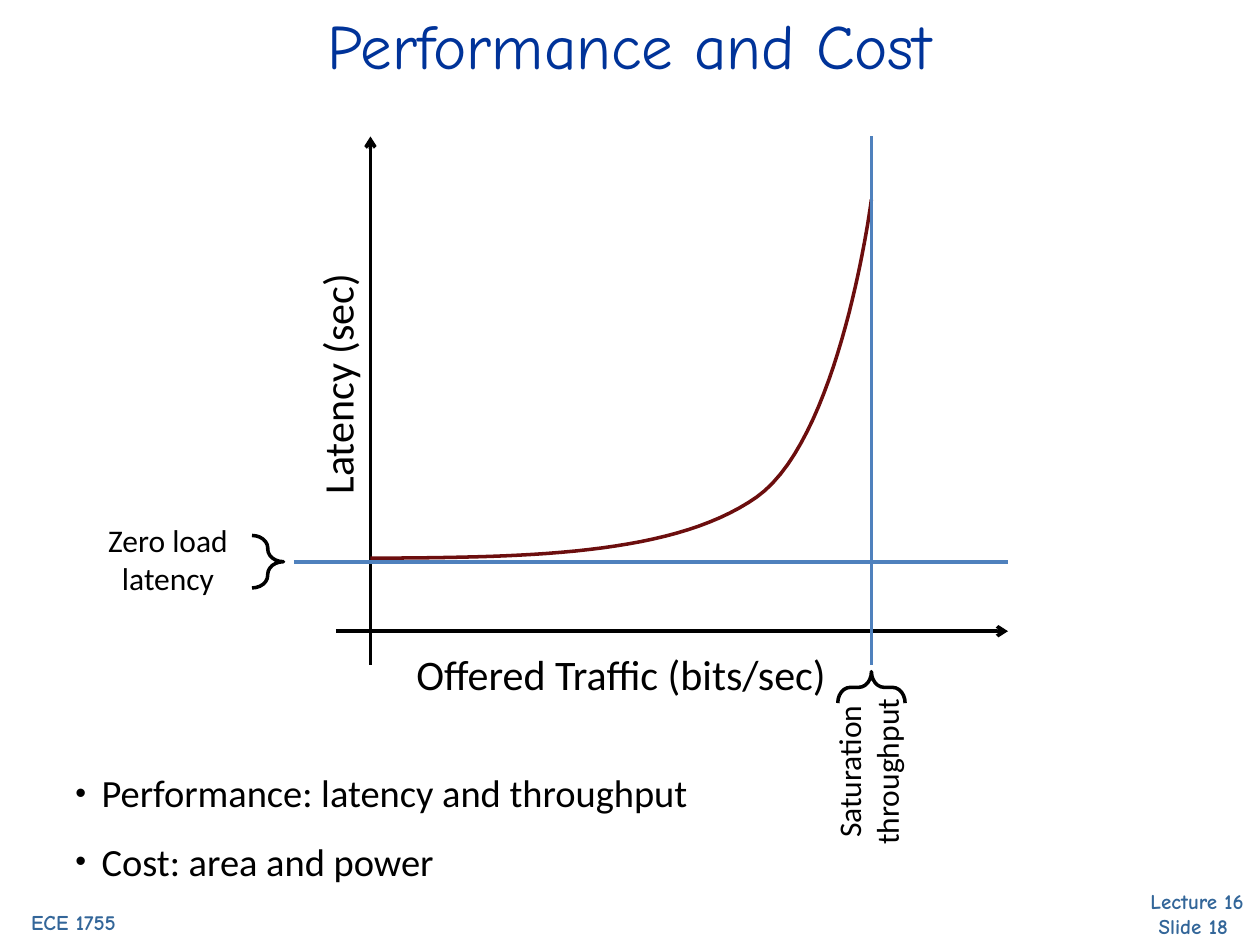
from dataclasses import dataclass

from lxml import etree
from pptx import Presentation
from pptx import util as u
from pptx.dml.color import RGBColor
from pptx.enum import shapes, text
from pptx.oxml.ns import qn

BLACK, BLUE, DARK_RED = "000000", "4F81BD", "6C0E0E"
TITLE_BLUE, FOOTER_BLUE = "003399", "336699"
BODY_FONT, TITLE_FONT = "Calibri", "Comic Neue"
LINE_WIDTH = 2

# Graph geometry in points
AXIS_X, AXIS_Y = 211.7, 360.7
TOP, BOTTOM, RIGHT = 78, 380, 576
SATURATION_X, ZERO_LOAD_Y = 498, 321


@dataclass
class Line:
    start: tuple[float, float]
    end: tuple[float, float]
    color: str
    arrow: bool = False


@dataclass
class Label:
    words: str
    box: tuple[float, float, float, float]
    size: float
    rotation: float = 0
    font: str = BODY_FONT
    color: str = BLACK
    bold: bool = False


@dataclass
class Brace:
    box: tuple[float, float, float, float]
    rotation: float = 0


LINES_BEHIND = [
    Line((AXIS_X, BOTTOM), (AXIS_X, TOP), BLACK, arrow=True),
    Line((192, AXIS_Y), (RIGHT, AXIS_Y), BLACK, arrow=True),
]
LINES_IN_FRONT = [
    Line((168, ZERO_LOAD_Y), (RIGHT, ZERO_LOAD_Y), BLUE),
    Line((SATURATION_X, BOTTOM), (SATURATION_X, TOP), BLUE),
]
CURVE = [
    [(211.7, 319), (298, 318.5), (384.5, 318), (432.5, 284)],
    [(432.5, 284), (480.5, 250), (498, 114), (498, 114)],
]
BRACES = [Brace((144, 306, 18, 30)), Brace((489, 373.5, 18, 38.5), 270)]
LABELS = [
    Label("Latency (sec)", (51, 201.5, 283, 36), 24, 270),
    Label("Offered Traffic (bits/sec)", (212, 367, 286, 36), 24),
    Label("Zero load latency", (48, 294, 96, 51), 18),
    Label("Saturation throughput", (439, 415.5, 114, 51), 18, 270),
    Label("Lecture 16\vSlide 18 ", (636, 504, 96, 36), 12,
          font=TITLE_FONT, color=FOOTER_BLUE, bold=True),
    Label("ECE 1755", (-6, 516, 96, 22), 12,
          font=TITLE_FONT, color=FOOTER_BLUE, bold=True),
]
BULLETS = ["Performance: latency and throughput", "Cost: area and power"]


def rgb(color: str) -> RGBColor:
    return RGBColor.from_string(color)


def points(values) -> list[u.Pt]:
    return [u.Pt(value) for value in values]


def format_runs(paragraph, size: float, font: str, color: str, bold: bool = False) -> None:
    for run in paragraph.runs:
        run.font.size = u.Pt(size)
        run.font.name = font
        run.font.bold = bold
        run.font.color.rgb = rgb(color)


def format_outline(shape, color: str) -> None:
    shape.line.color.rgb = rgb(color)
    shape.line.width = u.Pt(LINE_WIDTH)


def add_title(slide, words: str) -> None:
    title = slide.shapes.title
    title.left, title.top, title.width, title.height = points((36, 0, 648, 72))
    title.text_frame.text = words
    title.text_frame.vertical_anchor = text.MSO_ANCHOR.TOP
    paragraph = title.text_frame.paragraphs[0]
    paragraph.alignment = text.PP_ALIGN.CENTER
    format_runs(paragraph, 36, TITLE_FONT, TITLE_BLUE)


def add_line(slide, line: Line) -> None:
    connector = slide.shapes.add_connector(
        shapes.MSO_CONNECTOR.STRAIGHT, *points(line.start + line.end))
    format_outline(connector, line.color)
    if line.arrow:
        etree.SubElement(connector.line._get_or_add_ln(), qn("a:tailEnd"), type="arrow")
    etree.SubElement(connector._element.spPr, qn("a:effectLst"))


def bezier_points(controls, steps: int = 30) -> list[tuple[float, float]]:
    weights = (1, 3, 3, 1)
    curve = []
    for step in range(steps + 1):
        t = step / steps
        factors = [w * (1 - t) ** (3 - i) * t ** i for i, w in enumerate(weights)]
        curve.append(tuple(sum(f * c[axis] for f, c in zip(factors, controls))
                           for axis in (0, 1)))
    return curve


def add_curve(slide) -> None:
    first, *rest = [point for part in CURVE for point in bezier_points(part)]
    builder = slide.shapes.build_freeform(*points(first))
    builder.add_line_segments([points(point) for point in rest], close=False)
    curve = builder.convert_to_shape()
    curve.shadow.inherit = False
    curve.fill.background()
    format_outline(curve, DARK_RED)


def add_brace(slide, brace: Brace) -> None:
    shape = slide.shapes.add_shape(shapes.MSO_SHAPE.RIGHT_BRACE, *points(brace.box))
    shape.adjustments[0] = 0.4
    shape.rotation = brace.rotation
    shape.shadow.inherit = False
    shape.fill.background()
    format_outline(shape, BLACK)


def add_label(slide, label: Label) -> None:
    shape = slide.shapes.add_textbox(*points(label.box))
    shape.rotation = label.rotation
    shape.text_frame.word_wrap = True
    shape.text_frame.text = label.words
    paragraph = shape.text_frame.paragraphs[0]
    paragraph.alignment = text.PP_ALIGN.CENTER
    format_runs(paragraph, label.size, label.font, label.color, label.bold)


def add_bullets(slide) -> None:
    frame = slide.shapes.add_textbox(*points((36, 438.5, 648, 67))).text_frame
    frame.word_wrap = True
    frame.text = "\n".join(BULLETS)
    for paragraph in frame.paragraphs:
        paragraph.line_spacing = u.Pt(24)
        paragraph.space_before = u.Pt(15)
        format_runs(paragraph, 22, BODY_FONT, BLACK)
        properties = paragraph._p.get_or_add_pPr()
        properties.set("marL", str(u.Pt(15)))
        properties.set("indent", str(u.Pt(-15)))
        etree.SubElement(properties, qn("a:buSzPct"), val="80000")
        etree.SubElement(properties, qn("a:buFont"), typeface="Arial")
        etree.SubElement(properties, qn("a:buChar"), char="•")


def main() -> None:
    presentation = Presentation()
    presentation.slide_width, presentation.slide_height = points((720, 540))
    slide = presentation.slides.add_slide(presentation.slide_layouts[5])

    add_title(slide, "Performance and Cost")
    add_bullets(slide)

    # Latency graph: axes, curve, then the two limits
    for line in LINES_BEHIND:
        add_line(slide, line)
    add_curve(slide)
    for line in LINES_IN_FRONT:
        add_line(slide, line)

    # Annotations and footers
    for brace in BRACES:
        add_brace(slide, brace)
    for label in LABELS:
        add_label(slide, label)

    presentation.save("out.pptx")


if __name__ == "__main__":
    main()
